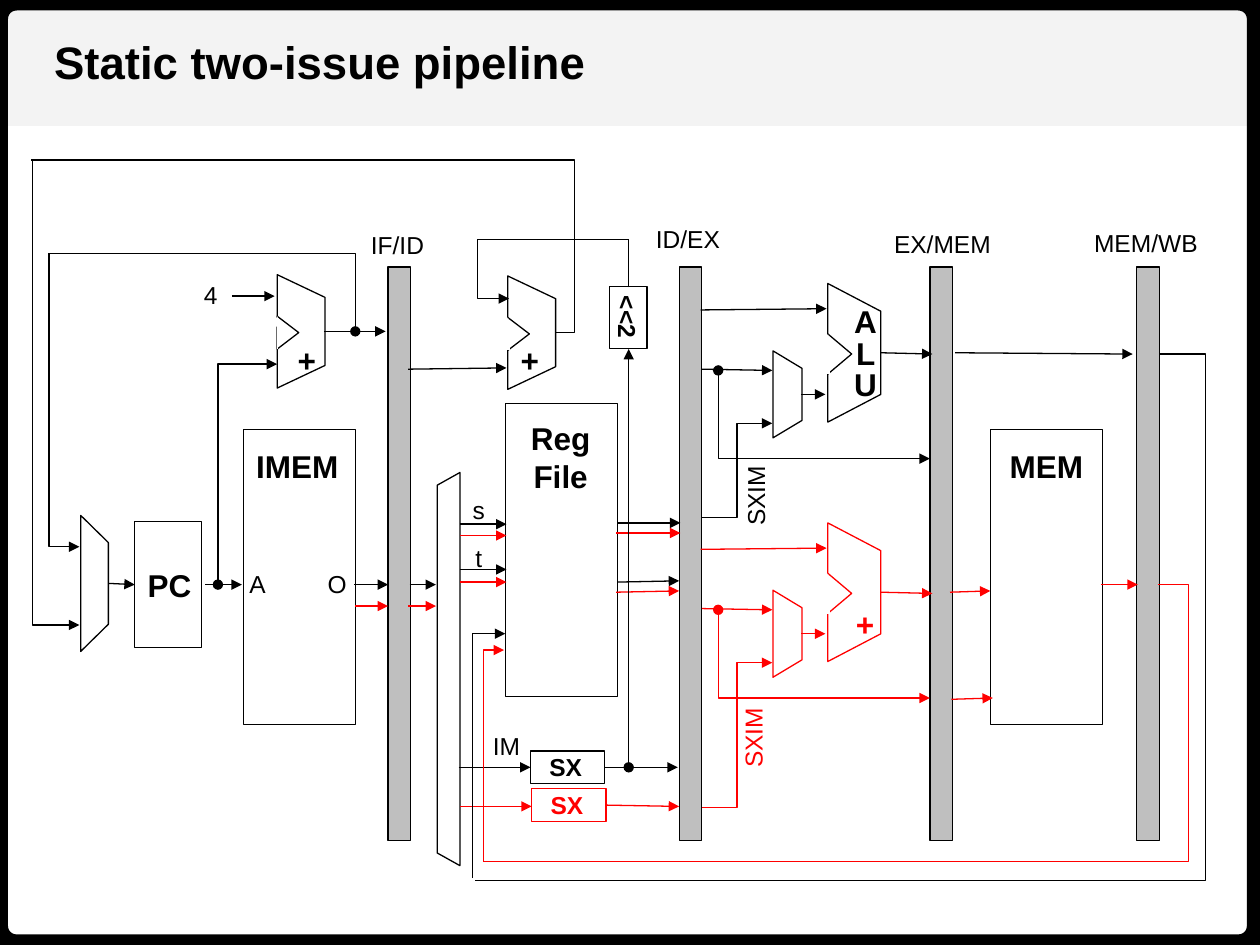
"""Draw the datapath of a static two-issue pipeline."""
from dataclasses import dataclass
from typing import Optional

import pptx
import pptx.dml.color
import pptx.enum.shapes
import pptx.enum.text
import pptx.oxml.ns
import pptx.util
from lxml import etree

RGBColor = pptx.dml.color.RGBColor
Preset = pptx.enum.shapes.MSO_SHAPE
Link = pptx.enum.shapes.MSO_CONNECTOR
Align = pptx.enum.text.PP_ALIGN
qn = pptx.oxml.ns.qn

BLACK = RGBColor(0x00, 0x00, 0x00)
RED = RGBColor(0xFF, 0x00, 0x00)
WHITE = RGBColor(0xFF, 0xFF, 0xFF)
REGISTER_GREY = RGBColor(0xBF, 0xBF, 0xBF)
HEADER_GREY = RGBColor(0xF3, 0xF3, 0xF3)
FONT = "Arial"
LANE_DROP = 1.9


@dataclass(frozen=True)
class Block:
    left: float
    top: float
    width: float
    height: float
    preset: Preset = Preset.RECTANGLE
    outline: Optional[RGBColor] = BLACK
    fill: Optional[RGBColor] = None
    turn: float = 0
    weight: float = 0.75
    adjust: Optional[float] = None


@dataclass(frozen=True)
class Wire:
    x1: float
    y1: float
    x2: float
    y2: float
    bend: Optional[float] = None
    color: RGBColor = BLACK
    dot: bool = False
    arrow: bool = True
    weight: float = 0.75


@dataclass(frozen=True)
class Label:
    lines: tuple[str, ...]
    left: float
    top: float
    width: float
    height: float = 0.34
    size: int = 14
    bold: bool = False
    color: RGBColor = BLACK
    turn: float = 0
    leading: Optional[int] = None
    align: Align = Align.CENTER
    inset: float = 0.1


def length(inches: float) -> pptx.util.Length:
    return pptx.util.Cm(inches * 2.54)


def draw_block(shapes, block: Block):
    box = (block.left, block.top, block.width, block.height)
    shape = shapes.add_shape(block.preset, *map(length, box))
    shape.shadow.inherit = False
    shape.rotation = block.turn
    if block.adjust is not None:
        shape.adjustments[0] = block.adjust
    if block.fill is None:
        shape.fill.background()
    else:
        shape.fill.solid()
        shape.fill.fore_color.rgb = block.fill
    if block.outline is None:
        shape.line.fill.background()
    else:
        shape.line.color.rgb = block.outline
        shape.line.width = pptx.util.Pt(block.weight)
    return shape


def draw_wire(shapes, wire: Wire) -> None:
    kind = Link.STRAIGHT if wire.bend is None else Link.ELBOW
    ends = (wire.x1, wire.y1, wire.x2, wire.y2)
    connector = shapes.add_connector(kind, *map(length, ends))
    connector.line.color.rgb = wire.color
    connector.line.width = pptx.util.Pt(wire.weight)
    properties = connector.element.spPr
    outline = properties.find(qn("a:ln"))
    if wire.dot:
        etree.SubElement(outline, qn("a:headEnd"), type="oval")
    if wire.arrow:
        etree.SubElement(outline, qn("a:tailEnd"), type="triangle")
    if wire.bend is not None:
        share = round((wire.bend - wire.x1) / (wire.x2 - wire.x1) * 100000)
        guides = properties.find(qn("a:prstGeom")).find(qn("a:avLst"))
        etree.SubElement(guides, qn("a:gd"), name="adj1", fmla=f"val {share}")
    etree.SubElement(properties, qn("a:effectLst"))


def write_text(frame, label: Label) -> None:
    frame.word_wrap = False
    frame.auto_size = pptx.enum.text.MSO_AUTO_SIZE.SHAPE_TO_FIT_TEXT
    frame.vertical_anchor = pptx.enum.text.MSO_ANCHOR.TOP
    frame.margin_left = frame.margin_right = length(label.inset)
    frame.margin_top = frame.margin_bottom = length(0.05)
    for index, line in enumerate(label.lines):
        paragraph = frame.add_paragraph() if index else frame.paragraphs[0]
        paragraph.alignment = label.align
        if label.leading:
            paragraph.line_spacing = pptx.util.Pt(label.leading)
        run = paragraph.add_run()
        run.text = line
        run.font.name = FONT
        run.font.size = pptx.util.Pt(label.size)
        run.font.bold = label.bold
        run.font.color.rgb = label.color


def draw_label(shapes, label: Label) -> None:
    box = (label.left, label.top, label.width, label.height)
    textbox = shapes.add_textbox(*map(length, box))
    textbox.rotation = label.turn
    write_text(textbox.text_frame, label)


def draw_mux(shapes, x: float, y: float, span: float, depth: float,
             color: RGBColor = BLACK, fill: Optional[RGBColor] = None) -> None:
    draw_block(shapes, Block(x - span / 2, y - depth / 2, span, depth,
                             Preset.FLOWCHART_MANUAL_OPERATION, color, fill, 270))


def draw_adder(shapes, x: float, y: float, span: float, depth: float,
               color: RGBColor = BLACK, mask: float = 3) -> None:
    draw_mux(shapes, x, y, span, depth, color)
    notch, notch_depth, side = span * 0.29, depth * 0.45, x - depth / 2
    middle = y + 0.01
    draw_block(shapes, Block(side + (notch_depth - notch) / 2, middle - notch_depth / 2,
                             notch, notch_depth, Preset.ISOSCELES_TRIANGLE, color, turn=90))
    draw_wire(shapes, Wire(side, middle + notch / 2, side, middle - notch / 2,
                           color=WHITE, weight=mask))


def draw_execute_lane(shapes, drop: float, color: RGBColor, immediate: float) -> None:
    draw_adder(shapes, 6.78, 2.8 + drop, 1.1, 0.42, color)
    draw_mux(shapes, 6.25, 3.13 + drop, 0.69, 0.23, color, WHITE)
    for x1, y1, x2, y2 in ((5.56, 2.46, 6.56, 2.45), (5.57, 2.93, 6.13, 2.94),
                           (6.36, 3.13, 6.55, 3.13), (6.99, 2.8, 7.4, 2.81)):
        draw_wire(shapes, Wire(x1, y1 + drop, x2, y2 + drop, color=color))
    draw_wire(shapes, Wire(5.7, 2.94 + drop, 7.38, 3.64 + drop, 5.7, color, True))
    draw_wire(shapes, Wire(5.57, immediate, 6.13, 3.36 + drop, 5.85, color))


BLOCKS = (
    Block(4.01, 3.2, 0.89, 2.33), Block(1.93, 3.41, 0.89, 2.34),
    Block(7.86, 3.41, 0.89, 2.34), Block(1.07, 4.14, 0.53, 1),
    Block(2, 5.22, 3.12, 0.18, Preset.TRAPEZOID, turn=270, adjust=0.56),
    Block(4.74, 2.37, 0.49, 0.3, turn=90), Block(4.21, 5.96, 0.59, 0.26),
    Block(4.22, 6.26, 0.59, 0.26, outline=RED),
    *(Block(left, 2.12, 0.18, 4.55, fill=REGISTER_GREY) for left in (3.08, 5.39, 7.38, 9.02)),
)
BLACK_FLOW = (
    (1.63, 4.64, 1.92, 4.64), (1.84, 2.35, 2.18, 2.35), (0.86, 4.63, 1.07, 4.64),
    (2.81, 4.64, 3.08, 4.64), (3.25, 4.64, 3.46, 4.64), (3.24, 2.93, 4.02, 2.92),
    (3.65, 4.16, 4.02, 4.16), (3.65, 4.52, 4.02, 4.52), (4.9, 4.15, 5.4, 4.15),
    (4.9, 4.62, 5.39, 4.61), (3.64, 6.09, 4.21, 6.09), (4.8, 6.09, 5.38, 6.09),
    (7.58, 2.8, 8.99, 2.81),
)
RED_FLOW = (
    (2.82, 4.81, 3.08, 4.81), (3.24, 4.81, 3.46, 4.81), (3.65, 4.25, 4.02, 4.25),
    (3.65, 4.62, 4.02, 4.62), (4.89, 4.23, 5.4, 4.23), (4.89, 4.7, 5.39, 4.69),
    (3.65, 6.4, 4.22, 6.4), (4.81, 6.39, 5.39, 6.4), (7.54, 4.7, 7.86, 4.69),
    (7.55, 5.55, 7.88, 5.54), (8.74, 4.64, 9.03, 4.64),
)
WIRES = (
    *(Wire(*ends) for ends in BLACK_FLOW), *(Wire(*ends, color=RED) for ends in RED_FLOW),
    Wire(2.57, 2.63, 0.39, 2.01, 2.82, arrow=False), Wire(0.39, 2.01, 0.63, 4.34, 0.39),
    Wire(4.41, 2.64, 0.25, 1.27, 4.56, arrow=False), Wire(0.26, 1.27, 0.63, 4.96, 0.26),
    Wire(1.73, 4.64, 2.2, 2.89, 1.73, dot=True), Wire(2.82, 2.63, 3.06, 2.63, dot=True),
    Wire(4.99, 6.09, 4.99, 2.77, dot=True), Wire(4.99, 2.28, 4.99, 1.9, arrow=False),
    Wire(4.99, 1.9, 4.04, 2.37, 3.79),
    Wire(9.2, 2.81, 3.77, 6.99, 9.57, arrow=False), Wire(3.75, 6.97, 4.01, 5.03, 3.75),
    Wire(9.19, 4.64, 3.84, 6.84, 9.43, RED, arrow=False), Wire(3.84, 6.84, 4, 5.16, 3.84, RED),
)
LABELS = (
    Label(("Reg", "File"), 4.11, 3.28, 0.68, 0.71, 18, True),
    Label(("IMEM",), 1.93, 3.5, 0.86, 0.4, 18, True),
    Label(("MEM",), 7.91, 3.5, 0.79, 0.4, 18, True),
    Label(("PC",), 1.07, 4.44, 0.55, 0.4, 18, True),
    Label(("+",), 2.26, 2.66, 0.35, 0.4, 18, True),
    Label(("+",), 4.03, 2.66, 0.35, 0.4, 18, True),
    Label(("+",), 6.69, 4.8, 0.35, 0.35, 18, True, RED, leading=18),
    Label(("A", "L", "U"), 6.68, 2.4, 0.38, 0.86, 18, True, leading=18),
    Label(("A",), 1.93, 4.47, 0.23, align=Align.LEFT, inset=0.05),
    Label(("O",), 2.55, 4.47, 0.25, align=Align.LEFT, inset=0.05),
    Label(("4",), 1.52, 2.17, 0.31, align=Align.LEFT),
    Label(("<<2",), 4.71, 2.35, 0.54, bold=True, turn=90, align=Align.LEFT),
    Label(("IF/ID",), 2.84, 1.78, 0.63), Label(("ID/EX",), 5.1, 1.73, 0.72),
    Label(("EX/MEM",), 6.99, 1.77, 0.98), Label(("MEM/WB",), 8.58, 1.76, 1.03),
    Label(("s",), 3.65, 3.88, 0.3), Label(("t",), 3.67, 4.26, 0.26),
    Label(("IM",), 3.81, 5.75, 0.42), Label(("SX",), 4.26, 5.92, 0.46, bold=True),
    Label(("SX",), 4.27, 6.22, 0.46, bold=True, color=RED),
    Label(("SXIM",), 5.69, 3.8, 0.68, 0.27, turn=270, leading=12),
    Label(("SXIM",), 5.67, 5.72, 0.68, 0.27, color=RED, turn=270, leading=12),
)
TITLE = Label(("Static two-issue pipeline",), 0.33, 0.22, 4.46, 0.54, 26, True, align=Align.LEFT)


def main() -> None:
    deck = pptx.Presentation()
    deck.slide_width, deck.slide_height = length(10), length(7.5)
    slide = deck.slides.add_slide(deck.slide_layouts[5])
    shapes, title = slide.shapes, slide.shapes.title
    title.left, title.top = length(TITLE.left), length(TITLE.top)
    title.width, title.height = length(TITLE.width), length(TITLE.height)
    write_text(title.text_frame, TITLE)
    for backdrop in (Block(0, 0, 10, 1, outline=None, fill=HEADER_GREY),
                     Block(-0.02, 0, 10, 7.5, Preset.ROUNDED_RECTANGLE, weight=12, adjust=0.02)):
        title.element.addprevious(draw_block(shapes, backdrop).element)
    for block in BLOCKS:
        draw_block(shapes, block)
    draw_mux(shapes, 0.75, 4.63, 1.08, 0.22)
    draw_adder(shapes, 2.39, 2.63, 0.9, 0.38, mask=0.75)
    draw_adder(shapes, 4.22, 2.64, 0.9, 0.38)
    draw_execute_lane(shapes, 0, BLACK, 4.11)
    draw_execute_lane(shapes, LANE_DROP, RED, 6.41)
    for wire in WIRES:
        draw_wire(shapes, wire)
    for label in LABELS:
        draw_label(shapes, label)
    deck.save("out.pptx")


if __name__ == "__main__":
    main()
